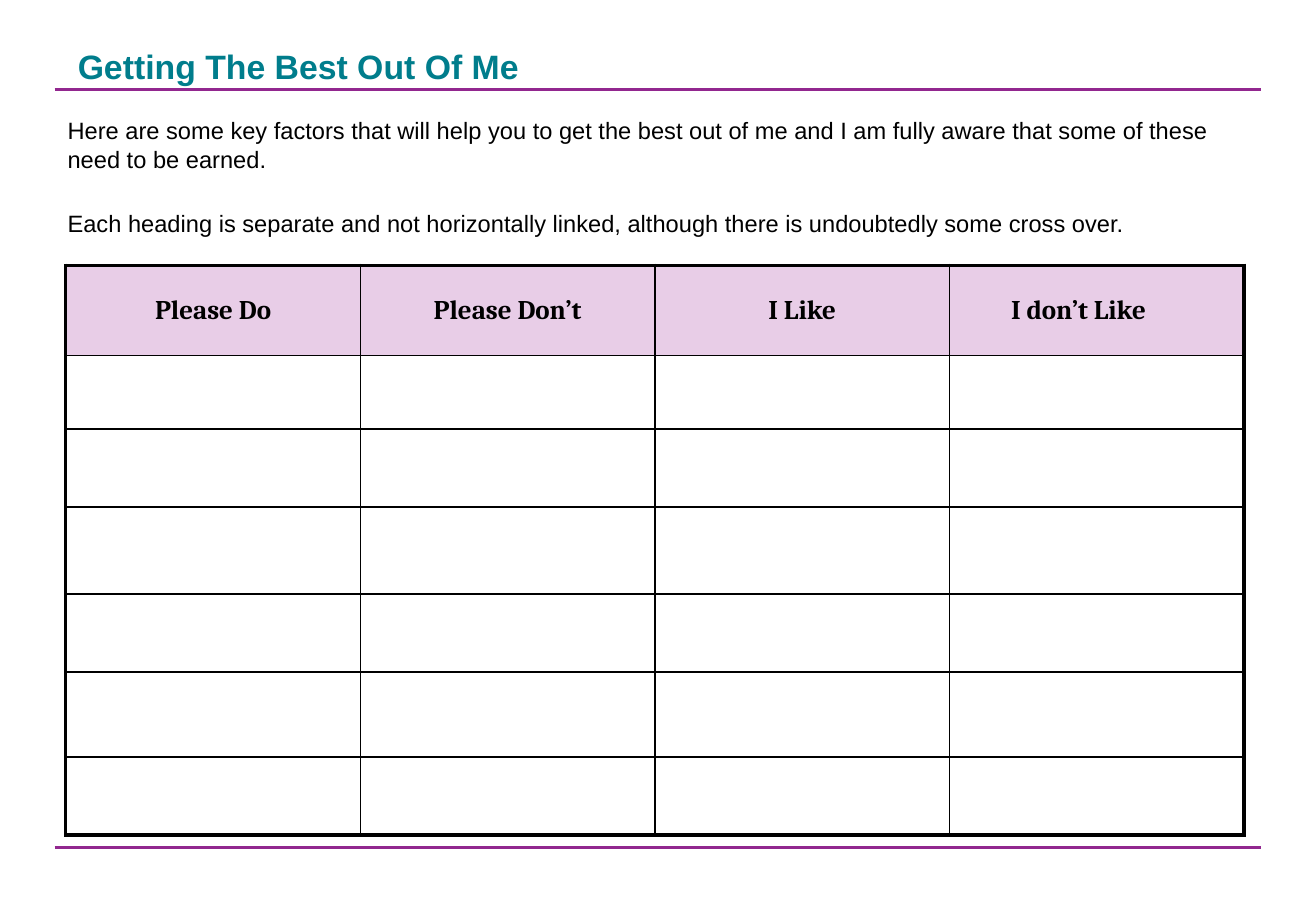
from dataclasses import dataclass

from lxml.etree import SubElement
from pptx import Presentation
from pptx.dml.color import RGBColor
from pptx.enum.shapes import MSO_CONNECTOR
from pptx.enum.text import MSO_ANCHOR, PP_ALIGN
from pptx.oxml.ns import qn
from pptx.util import Emu, Pt

PX = 7620


@dataclass(frozen=True)
class Theme:
    title: str = "007D8C"
    rule: str = "92278F"
    ink: str = "000000"
    header_fill: str = "E8CDE7"
    body_font: str = "Arial"
    header_font: str = "Cambria"
    title_size: int = 20
    intro_size: int = 14
    header_size: int = 16
    rule_width: float = 1.75
    outer_border: float = 2.25
    inner_border: float = 1


THEME = Theme()

TITLE = "Getting The Best Out Of Me"
INTRO = [
    "Here are some key factors that will help you to get the best out of me "
    "and I am fully aware that some of these need to be earned.",
    "Each heading is separate and not horizontally linked, although there is "
    "undoubtedly some cross over.",
]
HEADINGS = ["Please Do", "Please Don’t", "I Like", "I don’t Like"]
ROW_HEIGHTS = [89, 73, 77, 86, 77, 84, 77]
LAST_HEADING_INSET = 48


def px(length):
    return Emu(length * PX)


def add_span(para, text, font, size, color, bold=False):
    span = para.add_run()
    span.text = text
    span.font.name = font
    span.font.size = Pt(size)
    span.font.bold = bold
    span.font.color.rgb = RGBColor.from_string(color)


def add_text_frame(page, box):
    frame = page.shapes.add_textbox(*map(px, box)).text_frame
    frame.word_wrap = True
    return frame


def draw_rules(page, box):
    left, top, width, height = box
    for y in (top, top + height):
        rule = page.shapes.add_connector(
            MSO_CONNECTOR.STRAIGHT, px(left), px(y), px(left + width), px(y))
        rule.line.color.rgb = RGBColor.from_string(THEME.rule)
        rule.line.width = Pt(THEME.rule_width)
        SubElement(rule._element.spPr, qn("a:effectLst"))


def draw_title(page, box):
    para = add_text_frame(page, box).paragraphs[0]
    add_span(para, TITLE, THEME.body_font, THEME.title_size, THEME.title, True)


def draw_intro(page, box):
    frame = add_text_frame(page, box)
    for index, text in enumerate(INTRO):
        para = frame.add_paragraph() if index else frame.paragraphs[0]
        if index:
            para.space_before = Pt(21)
        add_span(para, text, THEME.body_font, THEME.intro_size, THEME.ink)


def set_borders(cell, outer_sides):
    properties = cell._tc.get_or_add_tcPr()
    for side in "LRTB":
        width = THEME.outer_border if side in outer_sides else THEME.inner_border
        line = SubElement(properties, qn(f"a:ln{side}"), w=str(Pt(width)))
        fill = SubElement(line, qn("a:solidFill"))
        SubElement(fill, qn("a:srgbClr"), val=THEME.ink)


def draw_preferences(page, box):
    left, top, width, height = box
    last_row, last_column = len(ROW_HEIGHTS) - 1, len(HEADINGS) - 1
    table = page.shapes.add_table(
        len(ROW_HEIGHTS), len(HEADINGS), *map(px, box)).table
    table.first_row = False
    table.horz_banding = False
    for column in table.columns:
        column.width = px(width // len(HEADINGS))
    for row, row_height in zip(table.rows, ROW_HEIGHTS):
        row.height = px(row_height)
    for r in range(len(ROW_HEIGHTS)):
        for c, heading in enumerate(HEADINGS):
            cell = table.cell(r, c)
            edges = {"L": c == 0, "R": c == last_column,
                     "T": r == 0, "B": r == last_row}
            set_borders(cell, [side for side, outer in edges.items() if outer])
            if r:
                cell.fill.background()
                continue
            cell.fill.solid()
            cell.fill.fore_color.rgb = RGBColor.from_string(THEME.header_fill)
            cell.vertical_anchor = MSO_ANCHOR.MIDDLE
            if c == last_column:
                cell.margin_right = px(LAST_HEADING_INSET)
            para = cell.text_frame.paragraphs[0]
            para.alignment = PP_ALIGN.CENTER
            add_span(para, heading, THEME.header_font, THEME.header_size,
                     THEME.ink, True)


def main():
    deck = Presentation()
    deck.slide_width, deck.slide_height = px(1300), px(900)
    page = deck.slides.add_slide(deck.slide_layouts[6])
    draw_rules(page, (54, 88, 1192, 749))
    draw_title(page, (65, 39, 1170, 50))
    draw_preferences(page, (65, 262, 1164, sum(ROW_HEIGHTS)))
    draw_intro(page, (55, 109, 1190, 136))
    deck.save("out.pptx")


if __name__ == "__main__":
    main()
